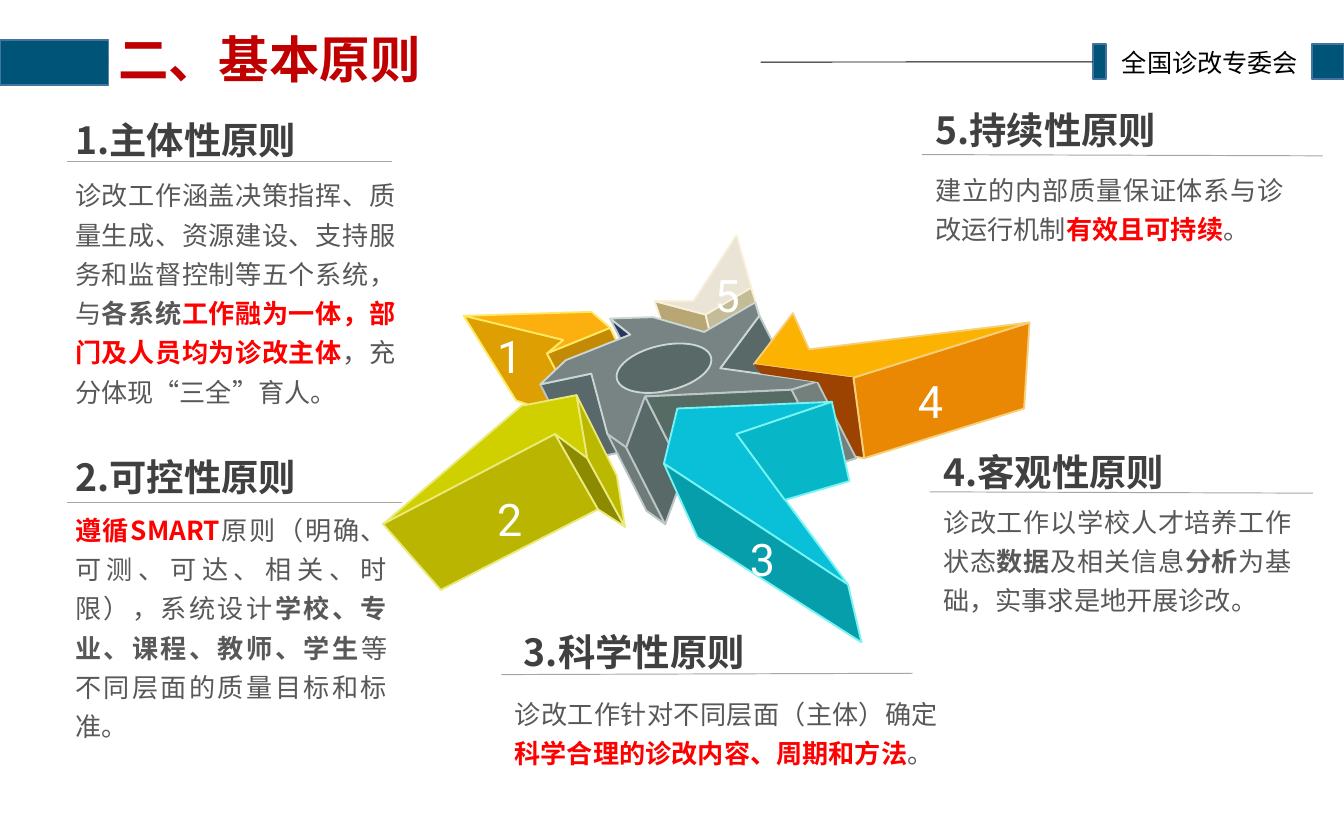
from lxml import etree
from pptx import Presentation
from pptx import util as u
from pptx.dml.color import RGBColor
from pptx.enum import shapes, text
from pptx.oxml.ns import qn

COLORS = {
    "white": "FFFFFF", "black": "000000", "title": "C00000", "heading": "404040",
    "body": "585858", "red": "FF0000", "rule": "A5A5A5", "bar": "005478",
    "bar_edge": "43739E", "hub": "788484", "hub_edge": "CAD7D4", "hub_side": "596968",
    "side_edge": "BBC6C6", "hub_left": "59696B", "hub_navy": "26395D",
    "hub_fold": "6F7B79", "hub_front": "556B63", "hub_right": "74807C",
    "orange_top": "FCB201", "orange": "EA8803", "brown": "9C4301", "orange_edge": "F7CF79",
    "sand_dark": "B8A675", "sand": "C4BB97", "sand_light": "EAE4D6", "sand_edge": "F8F0D8",
    "gold_top": "FBB00F", "gold": "DE9F02", "gold_dark": "C38A05", "gold_edge": "FFE862",
    "cyan": "0AC0D8", "cyan_dark": "069EAA", "cyan_side": "07B6C7", "cyan_edge": "76F3F3",
    "lime": "D0D000", "lime_front": "BAB501", "lime_dark": "8B8A00",
    "lime_side": "BAB900", "lime_edge": "EBE97A",
}
CJK = "Noto Sans CJK SC"
STYLES = {
    "title": ("title", {"size": u.Pt(27), "bold": True, "name": CJK}),
    "label": ("black", {"size": u.Pt(13.5), "name": CJK}),
    "heading": ("heading", {"size": u.Pt(20), "bold": True, "name": CJK}),
    "plain": ("body", {"size": u.Pt(14), "bold": False, "name": CJK}),
    "bold": ("body", {"size": u.Pt(14), "bold": True, "name": CJK}),
    "red": ("red", {"size": u.Pt(14), "bold": True, "name": CJK}),
    "digit": ("white", {"size": u.Pt(24), "name": "Roboto"}),
}


def paint(shape, fill, edge):
    shape.shadow.inherit = False
    shape.fill.solid()
    shape.fill.fore_color.rgb = RGBColor.from_string(COLORS[fill])
    if edge:
        shape.line.color.rgb = RGBColor.from_string(COLORS[edge])
        shape.line.width = u.Pt(1)
    else:
        shape.line.fill.background()


def write(shape, runs, frame_format, paragraph_format):
    for name, value in frame_format.items():
        setattr(shape.text_frame, name, value)
    paragraph = shape.text_frame.paragraphs[0]
    for name, value in paragraph_format.items():
        setattr(paragraph, name, value)
    for style, words in runs:
        run = paragraph.add_run()
        run.text = words
        color, font_format = STYLES[style]
        run.font.color.rgb = RGBColor.from_string(COLORS[color])
        for name, value in font_format.items():
            setattr(run.font, name, value)
        east_asian = etree.SubElement(run._r.get_or_add_rPr(), qn("a:ea"))
        east_asian.set("typeface", font_format["name"])


presentation = Presentation()
presentation.slide_width, presentation.slide_height = u.Pt(720), u.Pt(450)
slide = presentation.slides.add_slide(presentation.slide_layouts[5])

bars = []
for box in [(0, 21.6, 58.3, 23.8), (585.4, 23.8, 7.2, 18.7), (702.7, 23.8, 17.3, 18.7)]:
    bar = slide.shapes.add_shape(shapes.MSO_SHAPE.RECTANGLE, *map(u.Pt, box))
    paint(bar, "bar", "bar_edge")
    bars.append(bar)

SECTIONS = [
    ("主体性原则", (33.1, 59), (33.1, 88.6), 185.8, 6, (36, 86.4, 210.2, 86.4), (259.2, 172.8), [
        ("plain", "诊改工作涵盖决策指挥、质量生成、资源建设、支持服务和监督控制等五个系统，与"),
        ("bold", "各系统"), ("red", "工作融为一体，部门及人员均为诊改主体"),
        ("plain", "，充分体现“三全”育人。")]),
    ("可控性原则", (33.1, 239.8), (33.1, 267.8), 181.4, 6, (36, 269.3, 215.3, 269.3), (259.2, 259.9), [
        ("red", "遵循SMART"), ("plain", "原则（明确、可测、可达、相关、时限），系统设计"),
        ("bold", "学校、专业、课程、教师、学生"), ("plain", "等不同层面的质量目标和标准。")]),
    ("科学性原则", (273.6, 333.4), (268.6, 366.5), 241.2, 2, (268.6, 361.4, 488.9, 360.7), (394.6, 281.5), [
        ("plain", "诊改工作针对不同层面（主体）确定"),
        ("red", "科学合理的诊改内容、周期和方法"), ("plain", "。")]),
    ("客观性原则", (498.2, 236.9), (498.2, 263.5), 200.9, 3, (498.2, 263.5, 703.4, 264.2), (484.6, 196.6), [
        ("plain", "诊改工作以学校人才培养工作状态"), ("bold", "数据"), ("plain", "及相关信息"),
        ("bold", "分析"), ("plain", "为基础，实事求是地开展诊改。")]),
    ("持续性原则", (493.9, 54), (493.9, 85.7), 200.9, 2, (493.9, 82.8, 708.5, 83.5), (375.8, 139.7), [
        ("plain", "建立的内部质量保证体系与诊改运行机制"), ("red", "有效且可持续"), ("plain", "。")]),
]
rules = [("black", (585.4, 33.1, 58.3, 33.5))] + [("rule", section[5]) for section in SECTIONS]
for color, ends in rules:
    rule = slide.shapes.add_connector(shapes.MSO_CONNECTOR.STRAIGHT, *map(u.Pt, ends))
    rule.line.color.rgb = RGBColor.from_string(COLORS[color])
    rule.line.width = u.Pt(0.5)
    etree.SubElement(rule._element.spPr, qn("a:effectLst"))
    if color == "black":
        rule.begin_connect(bars[1], 1)
        rule.end_connect(bars[0], 3)

title = slide.shapes.title
title.element.getparent().append(title.element)
title.left, title.top, title.width, title.height = map(u.Pt, (58.3, 7.2, 349.2, 52.6))
title.fill.solid()
title.fill.fore_color.rgb = RGBColor.from_string(COLORS["white"])
write(title, [("title", "二、基本原则")],
      {"margin_left": u.Pt(5), "margin_right": u.Pt(5), "margin_top": u.Pt(3), "margin_bottom": u.Pt(3),
       "vertical_anchor": text.MSO_ANCHOR.MIDDLE, "auto_size": text.MSO_AUTO_SIZE.NONE, "word_wrap": True},
      {"alignment": text.PP_ALIGN.LEFT, "line_spacing": 0.9})

HUB_TOP = dict(zip("ABCDEFGHIJKLMNO", [
    (565, 235), (562, 225), (524, 247), (486, 236), (454, 237), (469, 249), (421, 268), (402, 286),
    (440, 278), (452, 323), (466, 333), (480, 295), (589, 290), (608, 284), (536, 274)]))
HUB_BASE = {name.lower(): (x + 29, y + 57) for name, (x, y) in HUB_TOP.items()}
HUB = {**HUB_TOP, **HUB_BASE}
ARROW_1 = dict(zip("ABCDEFGH", [
    (407, 263), (419, 253), (345, 235), (440, 232), (454, 244), (434, 315), (384, 298), (478, 294)]))
ARROW_2 = dict(zip("ABCDEFGHI", [
    (413, 323), (285, 390), (388, 302), (429, 294), (437, 341), (328, 439), (445, 379), (465, 392), (459, 354)]))
ARROW_3 = dict(zip("ABCDEFGHI", [
    (494, 345), (631, 435), (548, 323), (619, 299), (504, 304), (519, 400), (641, 478), (632, 358), (584, 372)]))
ARROW_4 = dict(zip("ABCDEFGHIJ", [
    (561, 271), (635, 281), (643, 341), (762, 304), (766, 240), (602, 260), (590, 233), (575, 329),
    (627, 287), (566, 278)]))
ARROW_5 = dict(zip("ABCDEFGH", [
    (487, 224), (525, 234), (534, 271), (499, 259), (559, 214), (569, 247), (516, 224), (548, 175)]))
FACES = [
    (ARROW_4, "orange_edge", [("orange", "BCDE"), ("brown", "ABCH")]),
    (ARROW_5, "sand_edge", [("sand_dark", "ABCD"), ("sand", "CBEF"), ("sand_light", "AGHEB")]),
    (ARROW_1, "gold_edge", [("gold_top", "ABCDE"), ("gold", "AFGCB"), ("gold_dark", "AEHF")]),
    (HUB, "hub_edge", [("hub", "abcdefghijklmno")]),
    (HUB, "side_edge", [("hub_left", "hHIi"), ("hub_side", "AaoO"), ("hub_navy", "EefF")]),
    (HUB, "hub_edge", [("hub", "ABCDEFGHIJKLMNO")]),
    (HUB, "side_edge", [("hub_fold", "KkjJ"), ("hub_side", "LlkK"), ("hub_front", "mMLl"), ("hub_right", "NnmM")]),
    (ARROW_4, "orange_edge", [("orange_top", "ABEFG")]),
    (ARROW_3, "cyan_edge", [("cyan", "ABCDE"), ("cyan_dark", "AFGB"), ("cyan_side", "DHIC")]),
    (ARROW_2, "lime_edge", [("lime", "ABCDE"), ("lime_front", "FBAG"), ("lime_dark", "EHGA"), ("lime_side", "DIHE")]),
    (ARROW_4, None, [("brown", "ABIJ")]),
]
star = slide.shapes.add_group_shape()
for corners, edge, faces in FACES:
    for fill, outline in faces:
        points = [corners[name] for name in outline]
        builder = star.shapes.build_freeform(*points[0], scale=u.Pt(0.72))
        builder.add_line_segments(points[1:], close=True)
        paint(builder.convert_to_shape(), fill, edge)
hole = star.shapes.add_shape(shapes.MSO_SHAPE.OVAL, *map(u.Pt, (329.8, 185, 51.8, 24.5)))
hole.rotation = 347.2
paint(hole, "hub_side", "hub_edge")

boxes = [((594, 21.6, 110.2, 23.8), [("label", "全国诊改专委会")])]
for number, (heading, heading_at, body_at, width, lines, _, digit_at, runs) in enumerate(SECTIONS, 1):
    boxes += [((*heading_at, 157, 31.7), [("heading", f"{number}.{heading}")]),
              ((*body_at, width, 7.2 + 21.2 * lines), runs),
              ((*digit_at, 29.5, 36), [("digit", str(number))])]

for box, runs in boxes:
    is_body = len(runs) > 1
    wraps = runs[0][0] not in ("label", "digit")
    write(slide.shapes.add_textbox(*map(u.Pt, box)), runs,
          {"word_wrap": wraps, "auto_size": text.MSO_AUTO_SIZE.SHAPE_TO_FIT_TEXT},
          {"alignment": text.PP_ALIGN.JUSTIFY, "line_spacing": 1.25} if is_body else {})

presentation.save("out.pptx")
